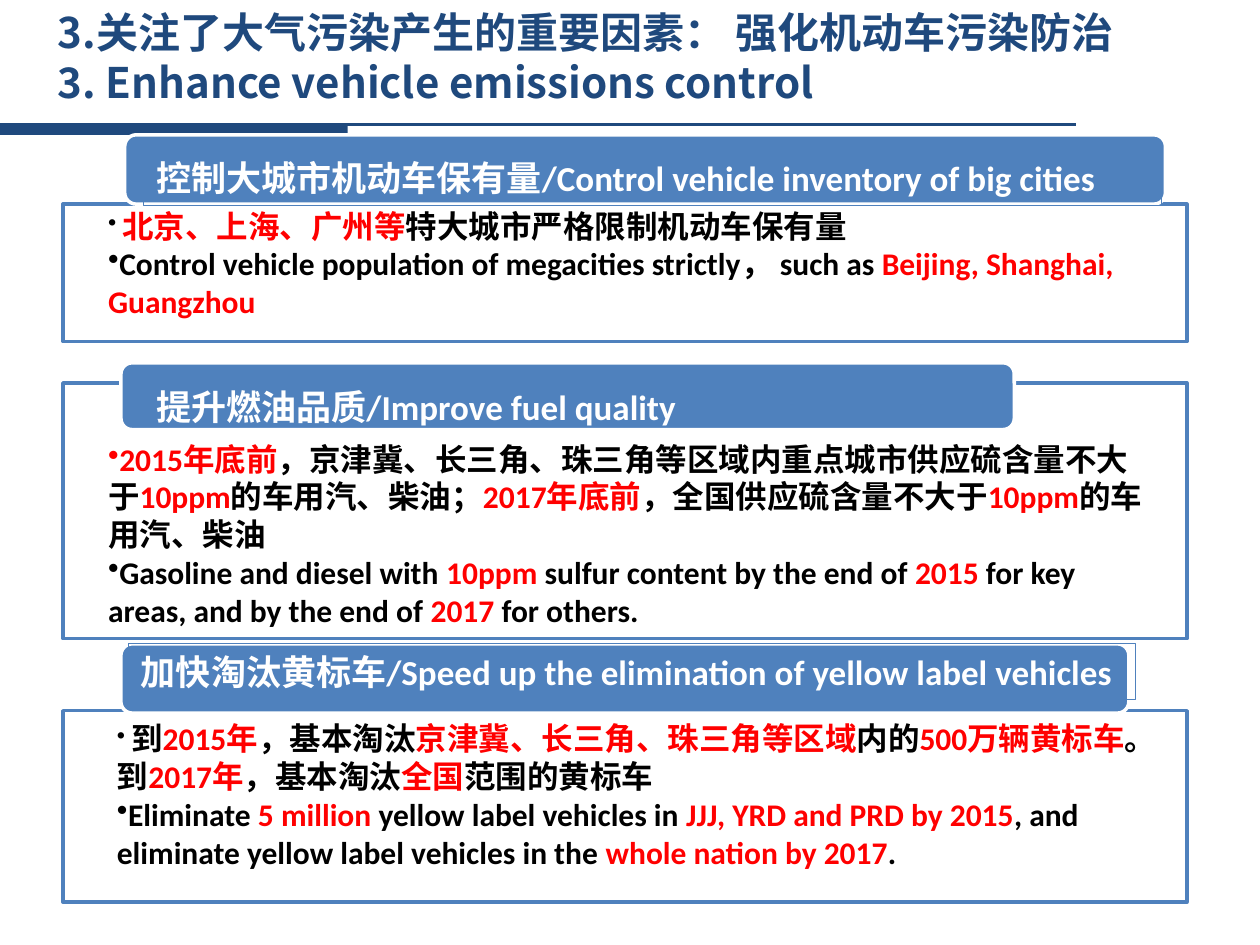
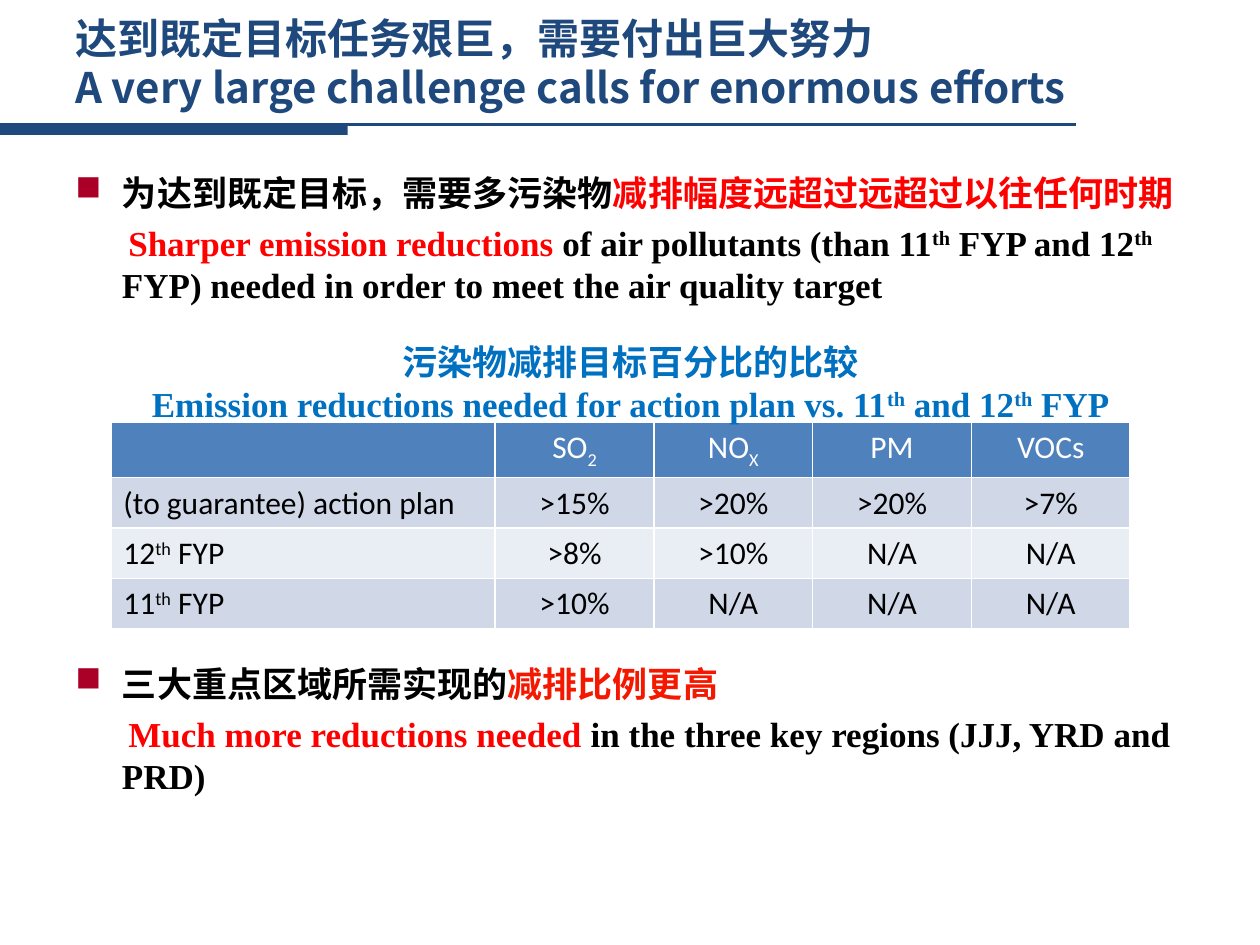
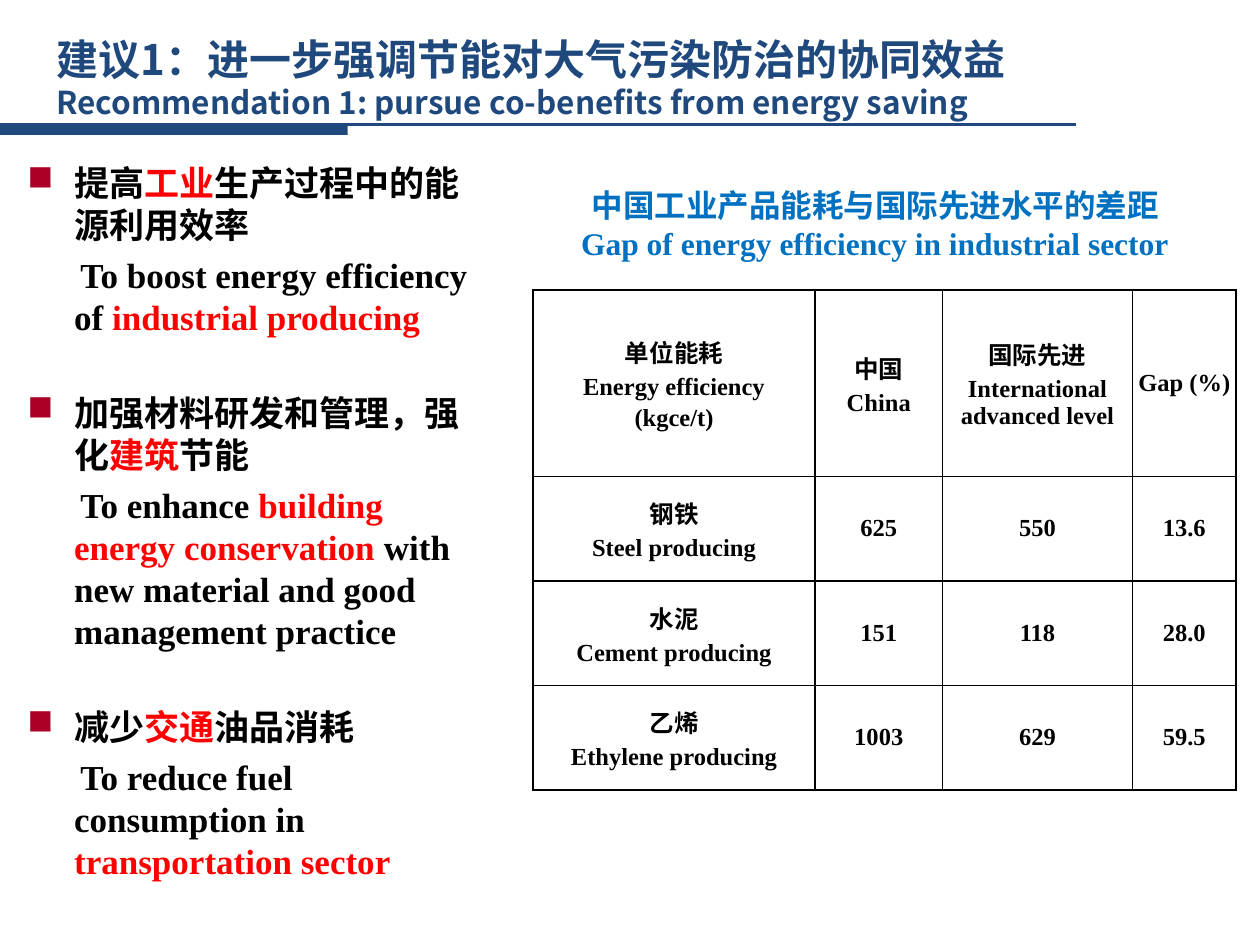
from dataclasses import dataclass
from typing import Optional

import lxml.etree
import pptx
import pptx.dml.color
import pptx.enum.shapes
import pptx.enum.text
import pptx.oxml.ns
import pptx.util
from pptx.util import Inches, Pt

NAVY, BLUE, CAPTION_BLUE = "1F497D", "4F81BD", "0070C0"
RED, ORANGE_RED, BULLET_RED = "FF0000", "F51801", "AA0027"
BLACK, WHITE = "000000", "FFFFFF"
ROW_FILLS = ["D0D8E8", "E9EDF4"]
SANS, SERIF, TITLE_FONT = "Calibri", "Times New Roman", "Noto Sans CJK SC"
CENTER = pptx.enum.text.PP_ALIGN.CENTER
LEFT = pptx.enum.text.PP_ALIGN.LEFT
MIDDLE = pptx.enum.text.MSO_ANCHOR.MIDDLE
RECTANGLE = pptx.enum.shapes.MSO_SHAPE.RECTANGLE
ROUNDED = pptx.enum.shapes.MSO_SHAPE.ROUNDED_RECTANGLE


@dataclass
class Run:
    """Text that differs from the style of its paragraph."""
    text: str
    color: Optional[str] = None
    size: Optional[float] = None
    baseline: int = 0


@dataclass
class Style:
    font: str
    size: float
    color: str = BLACK
    bold: bool = True
    align: int = LEFT


@dataclass
class Paragraph:
    runs: list
    bullet: str = ""
    bullet_color: str = ""
    margin: float = 0
    indent: float = 0
    before: float = 0
    after: float = 0
    size: Optional[float] = None
    line_height: Optional[float] = None


def red(text):
    return Run(text, RED)


def superscript(text):
    return Run(text, baseline=30)


def subscript(text):
    return Run(text, baseline=-25)


def dot(*runs):
    return Paragraph(runs, bullet="•")


def square(*runs, before=0):
    return Paragraph(runs, "■", BULLET_RED, 0.37, -0.37, before)


def translation(*runs):
    """English paragraph aligned under a square bullet."""
    return Paragraph(runs, margin=0.37, indent=0.05, before=4.5)


def rgb(color):
    return pptx.dml.color.RGBColor.from_string(color)


def add_child(parent, tag, **attributes):
    child = lxml.etree.SubElement(parent, pptx.oxml.ns.qn(tag))
    for name, value in attributes.items():
        child.set(name, str(value))
    return child


def add_bullet(paragraph, character, color):
    properties = paragraph._p.get_or_add_pPr()
    if color:
        add_child(add_child(properties, "a:buClr"), "a:srgbClr", val=color)
    add_child(properties, "a:buChar", char=character)


def write_text(frame, paragraphs, style):
    for index, content in enumerate(paragraphs):
        paragraph = frame.paragraphs[0] if index == 0 else frame.add_paragraph()
        paragraph.alignment = style.align
        properties = paragraph._p.get_or_add_pPr()
        properties.set("marL", str(Inches(content.margin)))
        properties.set("indent", str(Inches(content.indent)))
        if content.bullet:
            add_bullet(paragraph, content.bullet, content.bullet_color)
        if index and content.before:
            paragraph.space_before = Pt(content.before)
        if content.after:
            paragraph.space_after = Pt(content.after)
        if content.line_height:
            paragraph.line_spacing = Pt(content.line_height)
        for part in content.runs:
            part = Run(part) if isinstance(part, str) else part
            run = paragraph.add_run()
            run.text = part.text
            run.font.name = style.font
            run.font.size = Pt(part.size or content.size or style.size)
            run.font.bold = style.bold
            run.font.color.rgb = rgb(part.color or style.color)
            if part.baseline:
                run.font._element.set("baseline", str(part.baseline * 1000))


def set_borders(cell, color):
    properties = cell._tc.get_or_add_tcPr()
    for position, side in enumerate(["a:lnL", "a:lnR", "a:lnT", "a:lnB"]):
        line = lxml.etree.Element(pptx.oxml.ns.qn(side), w=str(Pt(1)))
        add_child(add_child(line, "a:solidFill"), "a:srgbClr", val=color)
        properties.insert(position, line)


class Deck:
    title_style = Style(TITLE_FONT, 24, NAVY)

    def __init__(self):
        self.presentation = pptx.Presentation()
        self.presentation.slide_width = Inches(10)
        self.presentation.slide_height = Inches(7.5)
        self.slide = None

    def new_slide(self, title, box, subtitle_size=24):
        self.slide = self.presentation.slides.add_slide(self.presentation.slide_layouts[6])
        self.line(0, 0.99, 8.54, 0.99, NAVY, 1.5)
        self.shape(RECTANGLE, (0, 0.99, 2.76, 0.08), NAVY)
        sizes = [self.title_style.size, subtitle_size]
        lines = [Paragraph([text], size=size, line_height=round(size * 1.17, 1))
                 for text, size in zip(title, sizes)]
        self.text(box, lines, self.title_style, anchor=MIDDLE)

    def line(self, x1, y1, x2, y2, color, width):
        connector = self.slide.shapes.add_connector(
            pptx.enum.shapes.MSO_CONNECTOR.STRAIGHT,
            Inches(x1), Inches(y1), Inches(x2), Inches(y2))
        connector.line.color.rgb = rgb(color)
        connector.line.width = Pt(width)
        add_child(connector._element.spPr, "a:effectLst")

    def shape(self, kind, box, fill, outline=None, opacity=100):
        shape = self.slide.shapes.add_shape(kind, *map(Inches, box))
        shape.shadow.inherit = False
        shape.fill.solid()
        shape.fill.fore_color.rgb = rgb(fill)
        if opacity < 100:
            color = shape._element.spPr.find(".//" + pptx.oxml.ns.qn("a:srgbClr"))
            add_child(color, "a:alpha", val=opacity * 1000)
        if outline:
            shape.line.color.rgb = rgb(outline)
            shape.line.width = Pt(2)
        else:
            shape.line.fill.background()

    def text(self, box, paragraphs, style, anchor=None, wrap=True, outline=None):
        shape = self.slide.shapes.add_textbox(*map(Inches, box))
        shape.text_frame.word_wrap = wrap
        if anchor is not None:
            shape.text_frame.vertical_anchor = anchor
        if outline:
            shape.line.color.rgb = rgb(outline)
            shape.line.width = Pt(0.75)
        write_text(shape.text_frame, paragraphs, style)

    def table(self, left, top, widths, heights, border):
        """Add a table with plain bordered cells and return it."""
        frame = self.slide.shapes.add_table(
            len(heights), len(widths), Inches(left), Inches(top),
            Inches(sum(widths)), Inches(sum(heights)))
        table = frame.table
        table.first_row = table.horz_banding = False
        for column, width in zip(table.columns, widths):
            column.width = Inches(width)
        for row, height in zip(table.rows, heights):
            row.height = Inches(height)
        for cell in table.iter_cells():
            cell.fill.background()
            set_borders(cell, border)
        return table


def vehicle_slide(deck):
    deck.new_slide(["3.关注了大气污染产生的重要因素： 强化机动车污染防治",
                    "3. Enhance vehicle emissions control"], (0.36, 0, 8.89, 0.91))
    small_space = Run(" ", size=14)
    sections = [
        dict(panel=(0.5, 1.62, 8.92, 1.09), band=(0.99, 1.07, 8.26, 0.55),
             heading_box=(1.14, 1.19, 8.08, 0.44), framed=True,
             heading="控制大城市机动车保有量/Control vehicle inventory of big cities",
             body_box=(0.76, 1.59, 9.04, 1.35),
             body=[dot(small_space, red("北京、上海、广州等"), "特大城市严格限制机动车保有量"),
                   dot("Control vehicle population of megacities strictly， such as ",
                       red("Beijing, Shanghai, Guangzhou"))]),
        dict(panel=(0.5, 3.04, 8.92, 2.03), band=(0.96, 2.88, 7.09, 0.53),
             heading_box=(1.14, 3.01, 4.62, 0.44), framed=False,
             heading="提升燃油品质/Improve fuel quality",
             body_box=(0.76, 3.44, 8.46, 1.62),
             body=[dot(red("2015年底前"),
                       "，京津冀、长三角、珠三角等区域内重点城市供应硫含量不大于",
                       red("10ppm"), "的车用汽、柴油；", red("2017年底前"),
                       "，全国供应硫含量不大于", red("10ppm"), "的车用汽、柴油"),
                   dot("Gasoline and diesel with ", red("10ppm"),
                       " sulfur content by the end of ", red("2015"),
                       " for key areas, and by the end of ", red("2017 "), "for others.")]),
        dict(panel=(0.5, 5.64, 8.92, 1.52), band=(0.96, 5.11, 8, 0.55),
             heading_box=(1.02, 5.11, 7.99, 0.44), framed=True,
             heading="加快淘汰黄标车/Speed up the elimination of yellow label vehicles",
             body_box=(0.83, 5.66, 8.46, 1.31),
             body=[dot(small_space, "到", red("2015年"), "，基本淘汰",
                       red("京津冀、长三角、珠三角等区域"), "内的", red("500万辆黄标车"),
                       "。到", red("2017年"), "，基本淘汰", red("全国"), "范围的黄标车"),
                   dot("Eliminate ", red("5 million "), "yellow label vehicles in ",
                       red("JJJ, YRD and PRD by 2015"),
                       ", and eliminate yellow label vehicles in the ",
                       red("whole nation by 2017"), ".")]),
    ]
    for section in sections:
        deck.shape(RECTANGLE, section["panel"], WHITE, BLUE, opacity=90)
        deck.shape(ROUNDED, section["band"], BLUE, WHITE)
        deck.text(section["heading_box"], [Paragraph([section["heading"]])],
                  Style(SANS, 20, WHITE), wrap=section["framed"],
                  outline=BLUE if section["framed"] else None)
        deck.text(section["body_box"], section["body"], Style(SANS, 18))


def challenge_slide(deck):
    deck.new_slide(["达到既定目标任务艰巨，需要付出巨大努力",
                    "A very large challenge calls for enormous efforts"],
                   (0.5, 0.04, 8.5, 0.91))
    th = superscript("th")
    deck.text((0.5, 1.31, 9, 5.76), [
        square("为达到既定目标，需要多污染物", red("减排幅度远超过远超过以往任何时期")),
        translation(red("Sharper emission reductions "), "of air pollutants (than 11", th,
                    " FYP and 12", th,
                    " FYP) needed in order to meet the air quality target"),
        square("三大重点区域所需实现的", Run("减排比例更高", ORANGE_RED), before=204),
        translation(red("Much more reductions needed "),
                    "in the three key regions (JJJ, YRD and PRD)"),
    ], Style(SERIF, 20))

    rows = [
        [[], ["SO", subscript("2")], ["NO", subscript("X")], ["PM"], ["VOCs"]],
        [["(to guarantee) action plan"], [">15%"], [">20%"], [">20%"], [">7%"]],
        [["12", th, " FYP"], [">8%"], [">10%"], ["N/A"], ["N/A"]],
        [["11", th, " FYP"], [">10%"], ["N/A"], ["N/A"], ["N/A"]],
    ]
    table = deck.table(0.88, 3.35, [3.05] + [1.26] * 4, [0.44] + [0.4] * 3, WHITE)
    for row_index, row in enumerate(rows):
        header = row_index == 0
        for column_index, runs in enumerate(row):
            cell = table.cell(row_index, column_index)
            cell.fill.solid()
            cell.fill.fore_color.rgb = rgb(BLUE if header else ROW_FILLS[(row_index - 1) % 2])
            style = Style(SANS, 18, WHITE if header else BLACK, bold=False,
                          align=CENTER if column_index else LEFT)
            write_text(cell.text_frame, [Paragraph(runs)], style)

    deck.text((1.01, 2.65, 7.99, 0.77), [
        Paragraph(["污染物减排目标百分比的比较"]),
        Paragraph(["Emission reductions needed for action plan vs. 11", th,
                   " and 12", th, " FYP"]),
    ], Style(SERIF, 20, CAPTION_BLUE, align=CENTER))


def recommendation_slide(deck):
    deck.new_slide(["建议1：进一步强调节能对大气污染防治的协同效益",
                    "Recommendation 1: pursue co-benefits from energy saving"],
                   (0.35, 0.21, 8.5, 0.81), subtitle_size=18)
    topic_gap = 31
    deck.text((0.12, 1.23, 3.7, 5.76), [
        square("提高", red("工业"), "生产过程中的能源利用效率"),
        translation("To boost energy efficiency of ", red("industrial producing")),
        square("加强材料研发和管理，强化", red("建筑"), "节能", before=topic_gap),
        translation("To enhance ", red("building energy conservation "),
                    "with new material and good management practice"),
        square("减少", red("交通"), "油品消耗", before=topic_gap),
        translation("To reduce fuel consumption in ", red("transportation sector")),
    ], Style(SERIF, 20))

    rows = [
        [["单位能耗", "Energy efficiency", "(kgce/t)"], ["中国", "China"],
         ["国际先进", "International advanced level"], ["Gap (%)"]],
        [["钢铁", "Steel producing"], ["625"], ["550"], ["13.6"]],
        [["水泥", "Cement producing"], ["151"], ["118"], ["28.0"]],
        [["乙烯", "Ethylene producing"], ["1003"], ["629"], ["59.5"]],
    ]
    table = deck.table(4.23, 2.3, [2.24, 1.01, 1.51, 0.82], [1.48] + [0.83] * 3, BLACK)
    cells = [lines for row in rows for lines in row]
    for cell, lines in zip(table.iter_cells(), cells):
        cell.vertical_anchor = MIDDLE
        cell.margin_left = cell.margin_right = Inches(0.02)
        cell.margin_top = cell.margin_bottom = 0
        write_text(cell.text_frame,
                   [Paragraph([line], before=1.2, after=1.2) for line in lines],
                   Style(SERIF, 14, align=CENTER))

    deck.text((4.42, 1.43, 5.05, 0.71), [
        Paragraph(["中国工业产品能耗与国际先进水平的差距"]),
        Paragraph(["Gap of energy efficiency in industrial sector"]),
    ], Style(SERIF, 18, CAPTION_BLUE, align=CENTER))


def main():
    deck = Deck()
    vehicle_slide(deck)
    challenge_slide(deck)
    recommendation_slide(deck)
    deck.presentation.save("out.pptx")


if __name__ == "__main__":
    main()
